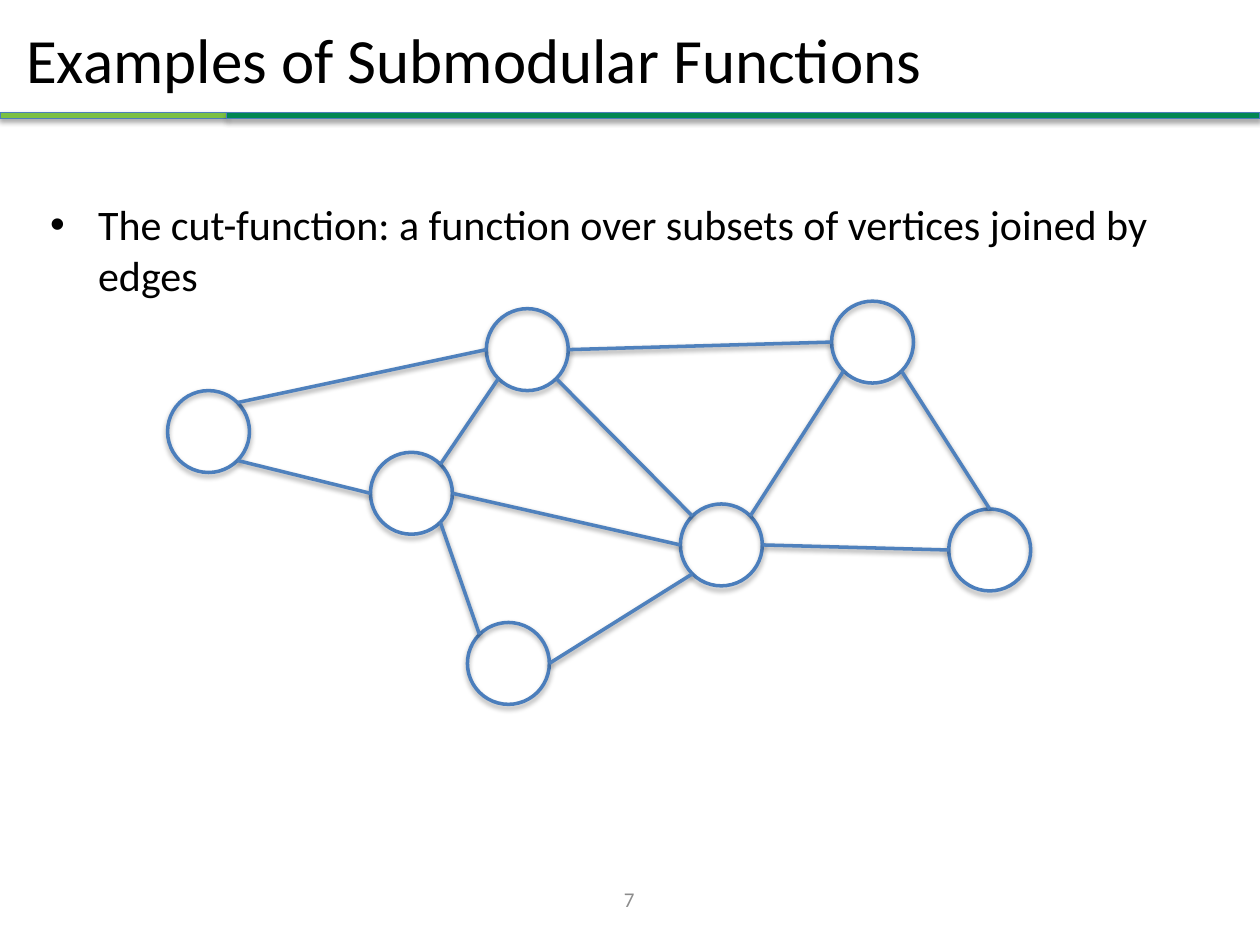
from math import cos, radians, sin
from typing import NamedTuple

from lxml import etree
from pptx import Presentation
from pptx.dml.color import RGBColor
from pptx.enum import shapes, text
from pptx.oxml.ns import qn
from pptx.util import Inches, Pt

COLORS = {
    "lime": "7AC043",
    "green": "018752",
    "outline": "4B7EBC",
    "edge": "4F81BD",
    "text": "000000",
    "page number": "8C8C8C",
}
DIAMETER = 0.65
ANGLES = {"left": 180, "right": 0, "top": 270, "upper left": 225,
          "upper right": 315, "lower left": 135, "lower right": 45}


class Vertex(NamedTuple):
    left: float
    top: float

    def anchor(self, side: str) -> tuple[float, float]:
        """Point on the circle's rim, in inches."""
        radius, angle = DIAMETER / 2, radians(ANGLES[side])
        return (self.left + radius * (1 + cos(angle)),
                self.top + radius * (1 + sin(angle)))


class Edge(NamedTuple):
    start: str
    start_side: str
    end: str
    end_side: str


class Label(NamedTuple):
    words: str
    left: float
    top: float
    width: float
    height: float
    size: int
    color: str = "text"
    anchor: text.MSO_ANCHOR = text.MSO_ANCHOR.MIDDLE
    align: text.PP_ALIGN = text.PP_ALIGN.LEFT
    bullet: bool = False


VERTICES = {
    "west": Vertex(1.33, 3.1),
    "south": Vertex(3.71, 4.94),
    "north": Vertex(3.86, 2.45),
    "center": Vertex(5.4, 4),
    "northeast": Vertex(6.6, 2.39),
    "east": Vertex(7.53, 4.04),
    "inner west": Vertex(2.94, 3.59),
}
EDGES = [
    Edge("west", "lower right", "inner west", "left"),
    Edge("inner west", "upper right", "north", "lower left"),
    Edge("inner west", "right", "center", "left"),
    Edge("inner west", "lower right", "south", "upper left"),
    Edge("south", "right", "center", "lower left"),
    Edge("north", "right", "northeast", "left"),
    Edge("northeast", "lower left", "center", "upper right"),
    Edge("west", "upper right", "north", "left"),
    Edge("east", "left", "center", "right"),
    Edge("northeast", "lower right", "east", "top"),
    Edge("north", "lower right", "center", "upper left"),
]
LABELS = [
    Label("Examples of Submodular Functions", 0.11, 0.1, 9.7, 0.73, 36),
    Label("The cut-function: a function over subsets of vertices joined by edges",
          0.3, 1.53, 9.31, 5.33, 24, anchor=text.MSO_ANCHOR.TOP, bullet=True),
    Label("7", 4.51, 6.94, 0.97, 0.4, 12, "page number",
          align=text.PP_ALIGN.CENTER),
]


def rgb(name: str) -> RGBColor:
    return RGBColor.from_string(COLORS[name])


def add_shadow(shape, opacity: int, distance: float) -> None:
    """Cast a soft black shadow straight down; distance is in points."""
    effects = etree.SubElement(shape._element.spPr, qn("a:effectLst"))
    shadow = etree.SubElement(
        effects, qn("a:outerShdw"), blurRad=str(Pt(3.1)),
        dist=str(Pt(distance)), dir="5400000", rotWithShape="0")
    black = etree.SubElement(shadow, qn("a:srgbClr"), val="000000")
    etree.SubElement(black, qn("a:alpha"), val=str(opacity * 1000))


def add_bar(slide, left: float, width: float, color: str) -> None:
    bar = slide.shapes.add_shape(
        shapes.MSO_SHAPE.RECTANGLE, Inches(left), Inches(0.89),
        Inches(width), Inches(0.05))
    bar.fill.solid()
    bar.fill.fore_color.rgb = rgb(color)
    bar.line.color.rgb = rgb("outline")
    bar.line.width = Pt(0.75)
    add_shadow(bar, 35, 1.8)


def add_label(slide, label: Label) -> None:
    box = slide.shapes.add_textbox(
        Inches(label.left), Inches(label.top),
        Inches(label.width), Inches(label.height))
    frame = box.text_frame
    frame.word_wrap = True
    frame.vertical_anchor = label.anchor
    frame.text = label.words
    paragraph = frame.paragraphs[0]
    paragraph.alignment = label.align
    if label.bullet:
        properties = paragraph._p.get_or_add_pPr()
        properties.set("marL", str(Inches(0.38)))
        properties.set("indent", str(Inches(-0.38)))
        etree.SubElement(properties, qn("a:buFont"), typeface="Arial")
        etree.SubElement(properties, qn("a:buChar"), char="•")
    font = paragraph.runs[0].font
    font.name = "Calibri"
    font.size = Pt(label.size)
    font.color.rgb = rgb(label.color)


def add_vertex(slide, vertex: Vertex) -> None:
    circle = slide.shapes.add_shape(
        shapes.MSO_SHAPE.OVAL, Inches(vertex.left), Inches(vertex.top),
        Inches(DIAMETER), Inches(DIAMETER))
    circle.fill.background()
    circle.line.color.rgb = rgb("outline")
    circle.line.width = Pt(2)
    add_shadow(circle, 35, 1.8)


def add_edge(slide, edge: Edge) -> None:
    start = VERTICES[edge.start].anchor(edge.start_side)
    end = VERTICES[edge.end].anchor(edge.end_side)
    line = slide.shapes.add_connector(
        shapes.MSO_CONNECTOR.STRAIGHT, *map(Inches, start + end))
    line.line.color.rgb = rgb("edge")
    line.line.width = Pt(2)
    add_shadow(line, 38, 1.6)


def main() -> None:
    deck = Presentation()
    deck.slide_width, deck.slide_height = Inches(10), Inches(7.5)
    slide = deck.slides.add_slide(deck.slide_layouts[6])
    add_bar(slide, 0, 1.8, "lime")
    add_bar(slide, 1.8, 8.2, "green")
    for label in LABELS:
        add_label(slide, label)
    for vertex in VERTICES.values():
        add_vertex(slide, vertex)
    for edge in EDGES:
        add_edge(slide, edge)
    deck.save("out.pptx")


if __name__ == "__main__":
    main()
